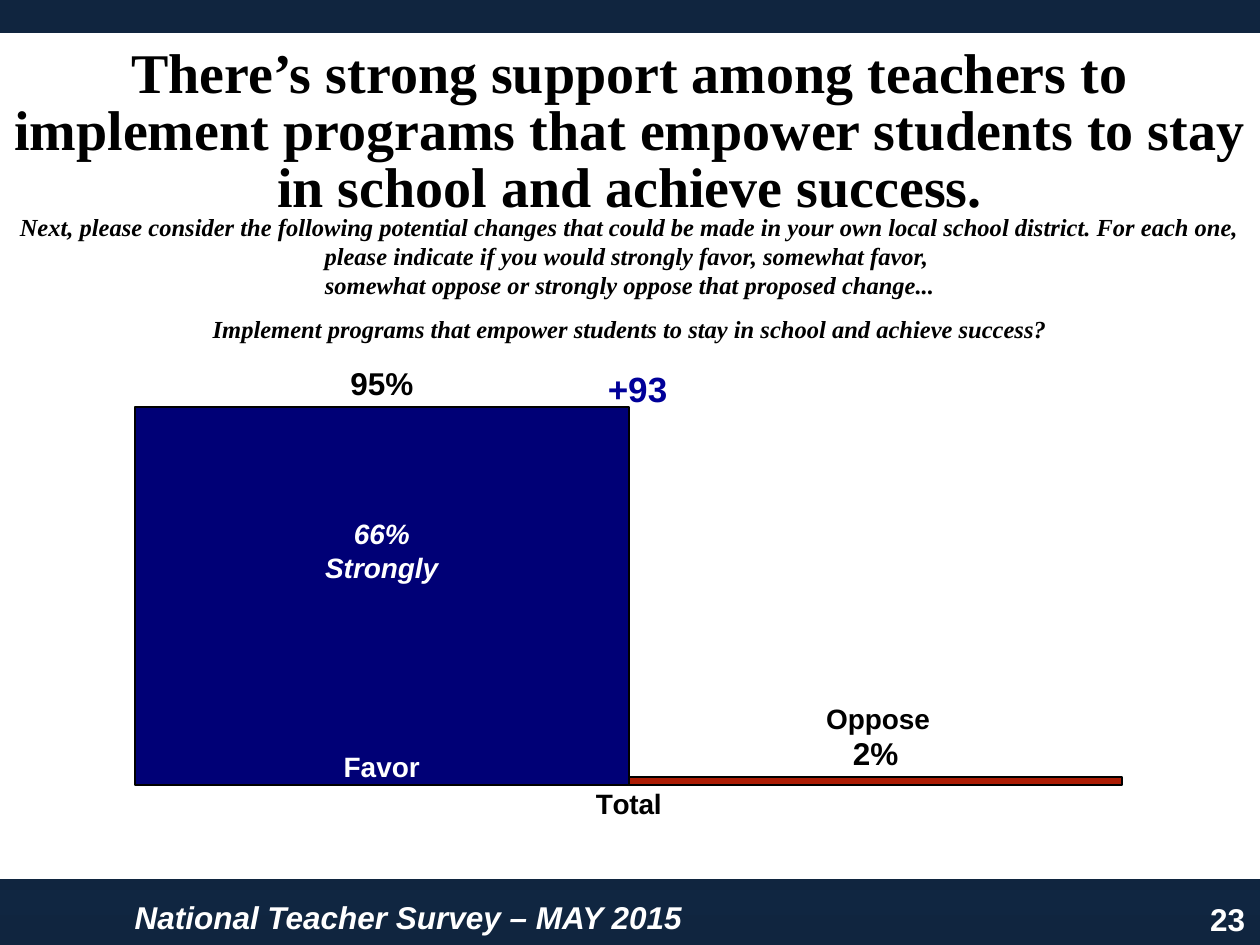
from copy import deepcopy
from pptx import Presentation
from pptx.chart.data import CategoryChartData
from pptx.dml.color import RGBColor
from pptx.enum.chart import XL_CHART_TYPE, XL_LABEL_POSITION, XL_TICK_LABEL_POSITION, XL_TICK_MARK
from pptx.enum.shapes import MSO_SHAPE
from pptx.enum.text import MSO_ANCHOR, PP_ALIGN
from pptx.oxml import parse_xml
from pptx.oxml.ns import nsdecls
from pptx.util import Inches, Pt

LEFT, MID, RIGHT = PP_ALIGN.LEFT, PP_ALIGN.CENTER, PP_ALIGN.RIGHT
NO_TICK = XL_TICK_MARK.NONE
SANS, SERIF = "Arial", "Times New Roman"
HUES = {"navy": "10253F", "steel": "17375E", "white": "FFFFFF", "black": "000000",
        "favor": "000076", "oppose": "AC1C04", "net": "000099"}

# Content
TITLE = ("There’s strong support among teachers to implement programs "
         "that empower students to stay in school and achieve success.")
ASK = ["Next, please consider the following potential changes that could be made in your own "
       "local school district. For each one, please indicate if you would strongly favor, somewhat favor, ",
       "somewhat oppose or strongly oppose that proposed change...",
       "Implement programs that empower students to stay in school and achieve success?"]
BARS = [("Favor", 0.95, "favor"), ("Oppose", 0.02, "oppose")]
BAR_X, BAR_W = 1.06, 3.94
# lines, box, size, colour, align, italic, font
NOTES = [
    (["23"], (8.98, 7.09, 1, 0.4), 18, "white", RIGHT, False, SANS),
    (["National Teacher Survey – MAY 2015"], (0.97, 7.08, 7.81, 0.4), 18, "white", LEFT, True, SANS),
    (ASK, (0, 1.63, 10, 1.16), 14, "black", MID, True, SERIF),
    (["Favor"], (BAR_X, 5.9, BAR_W, 0.37), 16, "white", MID, False, SANS),
    (["Oppose"], (BAR_X + BAR_W, 5.52, BAR_W, 0.37), 16, "black", MID, False, SANS),
    (["+93"], (4.39, 2.87, 1.34, 0.44), 20, "net", MID, False, SANS),
    (["66%", "Strongly"], (BAR_X, 4.05, BAR_W, 0.64), 16, "white", MID, True, SANS),
]


def hue(name):
    return RGBColor.from_string(HUES[name])


def style(font, size, color, face, slant=False):
    font.size, font.name, font.bold, font.italic = Pt(size), face, True, slant
    font.color.rgb = hue(color)


def write(frame, lines, size, color, align, slant, face):
    frame.word_wrap = True
    frame.vertical_anchor = MSO_ANCHOR.TOP
    for i, line in enumerate(lines):
        para = frame.paragraphs[0] if i == 0 else frame.add_paragraph()
        para.alignment = align
        run = para.add_run()
        run.text = line
        style(run.font, size, color, face, slant)
    return frame.paragraphs


deck = Presentation()
deck.slide_width, deck.slide_height = Inches(10), Inches(7.5)
slide = deck.slides.add_slide(deck.slide_layouts[5])
shapes = slide.shapes

# Gradient background, dark at both ends
fill = slide.background.fill
fill.gradient()
fill.gradient_angle = 90
first, last = fill.gradient_stops
for stop, name, pos in ((first, "navy", 0), (last, "navy", 1)):
    stop.color.rgb, stop.position = hue(name), pos
stops = fill._fill._gradFill.gsLst
stops.insert(1, deepcopy(stops[0]))
center = fill.gradient_stops[1]
center.color.rgb, center.position = hue("steel"), 0.5

# White panel
panel = shapes.add_shape(MSO_SHAPE.RECTANGLE, *map(Inches, (-0.1, 0.22, 10.19, 6.8)))
panel.shadow.inherit = False
panel.fill.solid()
panel.fill.fore_color.rgb = hue("white")
panel.line.color.rgb = hue("navy")
panel.line.width = Pt(6)

# Chart
data = CategoryChartData(number_format="0%")
data.categories = ["Total"]
for name, val, _ in BARS:
    data.add_series(name, [val])
chart = shapes.add_chart(XL_CHART_TYPE.COLUMN_CLUSTERED,
                         *map(Inches, (-0.06, -0.2, 10.11, 7.3)), data).chart
chart.has_legend = chart.has_title = False
style(chart.font, 18, "black", SANS)
plot = chart.plots[0]
plot.gap_width, plot.overlap, plot.vary_by_categories = 50, 0, False
for bar, (_, _, name) in zip(plot.series, BARS):
    bar.format.fill.solid()
    bar.format.fill.fore_color.rgb = hue(name)
    bar.format.line.color.rgb = hue("black")
    bar.format.line.width = Pt(1)
    tags = bar.data_labels
    tags.show_value = True
    tags.number_format, tags.number_format_is_linked = "0%", False
    tags.position = XL_LABEL_POSITION.OUTSIDE_END
    style(tags.font, 18, "black", SANS)

cats, vals = chart.category_axis, chart.value_axis
for axis in (cats, vals):
    axis.major_tick_mark = axis.minor_tick_mark = NO_TICK
    axis.has_major_gridlines = False
    axis.format.line.fill.background()
style(cats.tick_labels.font, 16, "black", SANS)
vals.minimum_scale, vals.maximum_scale, vals.major_unit = 0, 1.05, 0.1
vals.tick_label_position = XL_TICK_LABEL_POSITION.NONE

# Fixed inner plot area
area = chart._chartSpace.chart.plotArea
for old in area.findall("{*}layout"):
    area.remove(old)
spots = "".join(f'<c:{key} val="{val}"/>' for key, val in
                (("layoutTarget", "inner"), ("xMode", "edge"), ("yMode", "edge"),
                 ("x", 0.015), ("y", 0.427), ("w", 0.969), ("h", 0.454)))
area.insert(0, parse_xml(f'<c:layout {nsdecls("c")}><c:manualLayout>{spots}</c:manualLayout></c:layout>'))

# Title
title = shapes.title
title.left, title.top, title.width, title.height = map(Inches, (0, 0.33, 10, 1.47))
write(title.text_frame, [TITLE], 32, "black", MID, False, SERIF)[0].line_spacing = 0.85
shapes._spTree.append(title._element)

# Question, bar names and footer
for lines, box, *look in NOTES:
    paras = write(shapes.add_textbox(*map(Inches, box)).text_frame, lines, *look)
    if lines is ASK:
        paras[-1].space_before = Pt(8)

deck.save("out.pptx")
